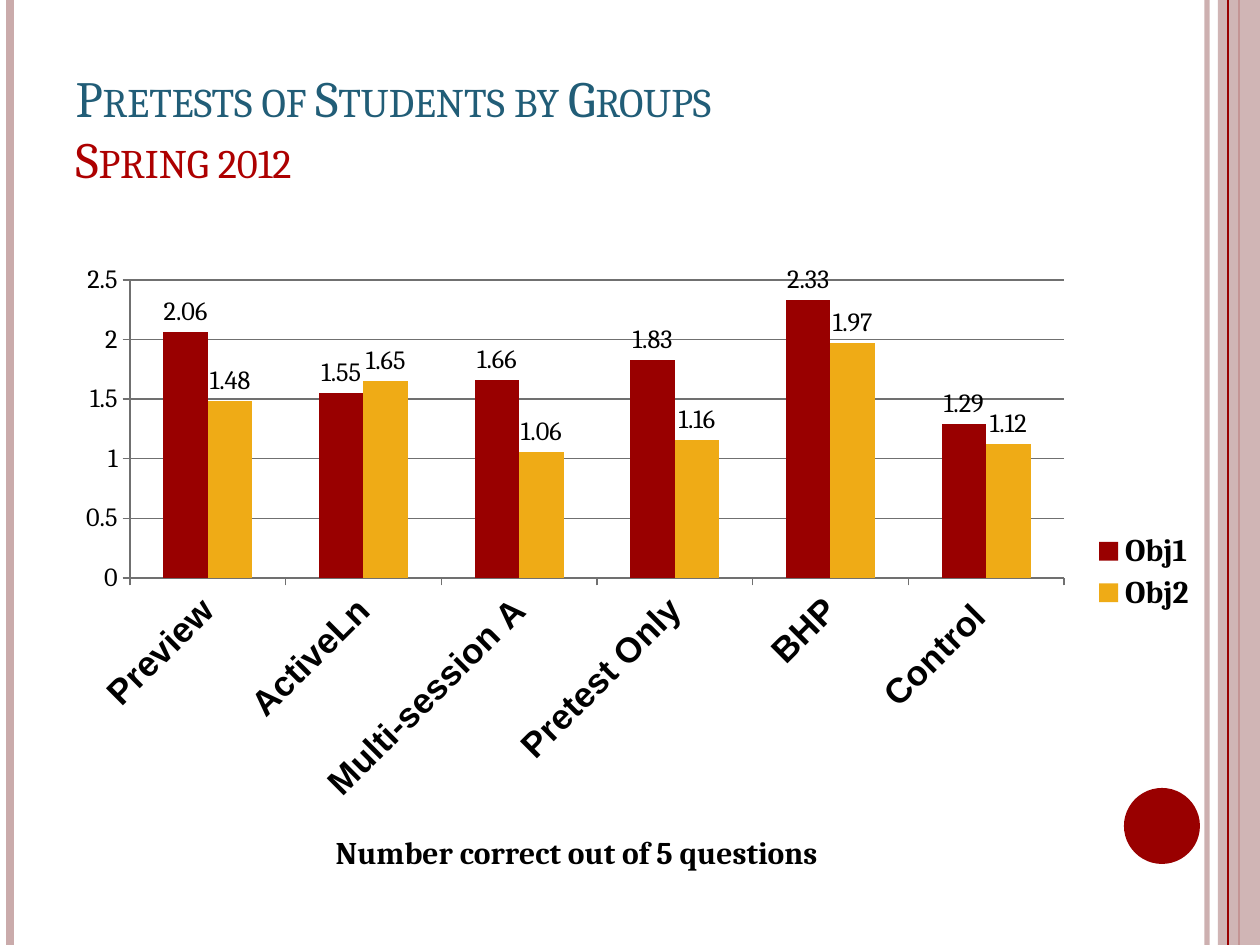
"""Build the slide comparing student pretest scores by group."""
from lxml import etree
from pptx import Presentation
from pptx import util as u
from pptx.chart import data as chart_data
from pptx.dml.color import RGBColor
from pptx.enum import chart as ch, shapes, text
from pptx.oxml.ns import qn

PX = 914400 / 126
RED = RGBColor(0x99, 0x00, 0x00)
TITLE_RED = RGBColor(0xAD, 0x00, 0x00)
TEAL = RGBColor(0x21, 0x5D, 0x77)
GOLD = RGBColor(0xEF, 0xAB, 0x16)
PINK = RGBColor(0xCA, 0xAB, 0xAB)
GRAY = RGBColor(0x70, 0x70, 0x70)
BLACK = RGBColor(0, 0, 0)

TITLE_LINES = [("Pretests of Students by Groups", TEAL), ("Spring 2012", TITLE_RED)]
TITLE_BOX = (63, 38, 1029, 157)
GROUPS = ["Preview", "ActiveLn", "Multi-session A", "Pretest Only", "BHP", "Control "]
SERIES = [
    ("Obj1", [2.06, 1.55, 1.66, 1.83, 2.33, 1.29], RED),
    ("Obj2", [1.48, 1.65, 1.06, 1.16, 1.97, 1.12], GOLD),
]
AXIS_TITLE = "Number correct out of 5 questions "
CHART_BOX = (63, 252, 1144, 640)
PLOT_BOX = (130, 280, 934, 298)
LEGEND_BOX = (1092, 528, 104, 88)
AXIS_TITLE_POINT = (330, 826)

RULES_BEHIND = [(1207, PINK, 3, 93), (10, PINK, 4.5, 100), (1239, RED, 1.5, 100)]
BAND = ("RECTANGLE", (1218, 0, 42, 945), PINK, 87)
RULES_FRONT = [(1228, RED, 0.75, 100)]
DOT = ("OVAL", (1124, 788, 76, 76), RED, 100)


def px(*lengths):
    return [u.Emu(round(length * PX)) for length in lengths]


def apply(target, **values):
    for name, value in values.items():
        setattr(target, name, value)


def style_font(font, size, color=BLACK, name="Cambria", bold=False):
    apply(font, size=u.Pt(size), name=name, bold=bold)
    font.color.rgb = color


def set_opacity(shape, percent):
    if percent < 100:
        color = next(shape._element.spPr.iter(qn("a:srgbClr")))
        etree.SubElement(color, qn("a:alpha")).set("val", str(percent * 1000))


def add_rules(slide, rules):
    for x, color, width, opacity in rules:
        rule = slide.shapes.add_connector(shapes.MSO_CONNECTOR.STRAIGHT, *px(x, 0, x, 945))
        rule.line.color.rgb = color
        rule.line.width = u.Pt(width)
        set_opacity(rule, opacity)
        etree.SubElement(rule._element.spPr, qn("a:effectLst"))


def add_block(slide, kind, box, color, opacity):
    block = slide.shapes.add_shape(shapes.MSO_SHAPE[kind], *px(*box))
    block.shadow.inherit = False
    block.fill.solid()
    block.fill.fore_color.rgb = color
    block.line.fill.background()
    set_opacity(block, opacity)


def fill_title(title):
    apply(title, **dict(zip(("left", "top", "width", "height"), px(*TITLE_BOX))))
    frame = title.text_frame
    apply(frame, vertical_anchor=text.MSO_ANCHOR.BOTTOM, word_wrap=True,
          auto_size=text.MSO_AUTO_SIZE.NONE)
    paragraph = frame.paragraphs[0]
    paragraph.alignment = text.PP_ALIGN.LEFT
    for index, (words, color) in enumerate(TITLE_LINES):
        if index:
            paragraph.add_line_break()
        run = paragraph.add_run()
        run.text = words
        style_font(run.font, 29, color)
        run.font._element.set("cap", "small")


def place(element, index, box, inner=False):
    for old in element.findall(qn("c:layout")):
        element.remove(old)
    layout = etree.Element(qn("c:layout"))
    manual = etree.SubElement(layout, qn("c:manualLayout"))
    left, top, width, height = CHART_BOX
    fractions = [(box[0] - left) / width, (box[1] - top) / height]
    if len(box) == 4:
        fractions += [box[2] / width, box[3] / height]
    settings = [("layoutTarget", "inner")] if inner else []
    settings += [("xMode", "edge"), ("yMode", "edge")]
    settings += [(key, f"{value:.4f}") for key, value in zip("xywh", fractions)]
    for key, value in settings:
        etree.SubElement(manual, qn(f"c:{key}")).set("val", value)
    element.insert(index, layout)


def add_scores(slide):
    scores = chart_data.CategoryChartData()
    scores.categories = GROUPS
    for name, values, _ in SERIES:
        scores.add_series(name, values)
    chart = slide.shapes.add_chart(
        ch.XL_CHART_TYPE.COLUMN_CLUSTERED, *px(*CHART_BOX), scores).chart
    apply(chart, has_title=False, has_legend=True)
    style_font(chart.font, 10)
    apply(chart.legend, position=ch.XL_LEGEND_POSITION.RIGHT, include_in_layout=False)
    style_font(chart.legend.font, 18, bold=True)

    plot = chart.plots[0]
    apply(plot, gap_width=150, overlap=0, vary_by_categories=False)
    for series, (_, _, color) in zip(plot.series, SERIES):
        series.format.fill.solid()
        series.format.fill.fore_color.rgb = color
        labels = series.data_labels
        apply(labels, show_value=True, position=ch.XL_LABEL_POSITION.OUTSIDE_END)
        style_font(labels.font, 15)

    groups, values = chart.category_axis, chart.value_axis
    apply(values, minimum_scale=0, maximum_scale=2.5, major_unit=0.5,
          has_major_gridlines=True)
    for axis in (groups, values):
        axis.major_tick_mark = ch.XL_TICK_MARK.OUTSIDE
    for line in (groups.format.line, values.format.line, values.major_gridlines.format.line):
        line.color.rgb = GRAY
        line.width = u.Pt(0.75)
    style_font(values.tick_labels.font, 15)
    style_font(groups.tick_labels.font, 20, name="Arial", bold=True)
    frame = groups.axis_title.text_frame
    frame.text = AXIS_TITLE
    style_font(frame.paragraphs[0].runs[0].font, 18, bold=True)

    root = chart._chartSpace
    root.xpath(".//c:catAx/c:txPr/a:bodyPr")[0].set("rot", "-2700000")
    place(root.xpath(".//c:plotArea")[0], 0, PLOT_BOX, inner=True)
    place(root.xpath(".//c:legend")[0], 1, LEGEND_BOX)
    place(root.xpath(".//c:catAx/c:title")[0], 1, AXIS_TITLE_POINT)


def main():
    presentation = Presentation()
    apply(presentation, slide_width=u.Inches(10), slide_height=u.Inches(7.5))
    slide = presentation.slides.add_slide(presentation.slide_layouts[5])
    add_rules(slide, RULES_BEHIND)
    add_block(slide, *BAND)
    add_rules(slide, RULES_FRONT)
    add_block(slide, *DOT)
    fill_title(slide.shapes.title)
    add_scores(slide)
    presentation.save("out.pptx")


if __name__ == "__main__":
    main()
